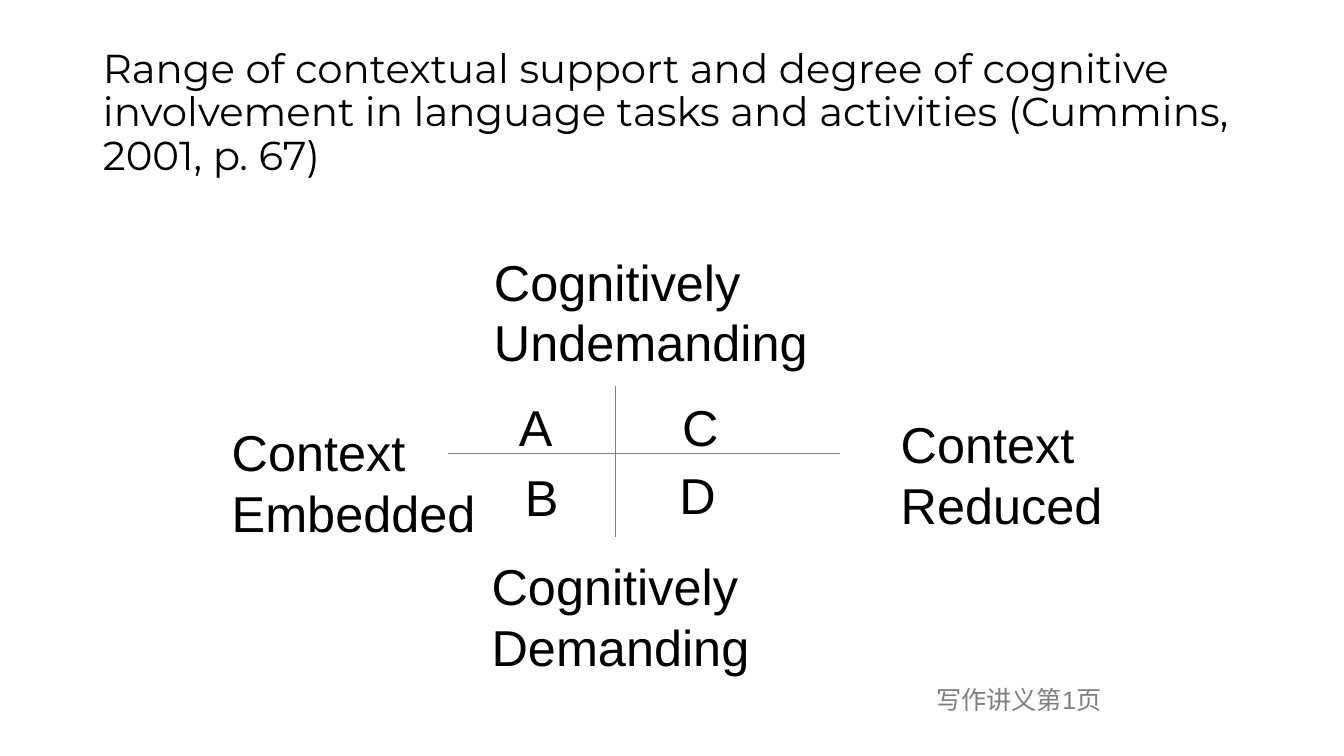
from dataclasses import dataclass

from lxml import etree
from pptx import Presentation
from pptx.dml.color import RGBColor
from pptx.enum.shapes import MSO_CONNECTOR
from pptx.enum.text import MSO_ANCHOR, PP_ALIGN
from pptx.oxml.ns import qn
from pptx.util import Cm, Pt

LEFT = PP_ALIGN.LEFT
TOP = MSO_ANCHOR.TOP
MIDDLE = MSO_ANCHOR.MIDDLE
STRAIGHT = MSO_CONNECTOR.STRAIGHT


@dataclass(frozen=True)
class Theme:
    ink: RGBColor = RGBColor(0, 0, 0)
    gray: RGBColor = RGBColor(0x7F, 0x7F, 0x7F)
    head: str = "Montserrat"
    body: str = "Arial"
    title: float = 28.8
    label: float = 36
    foot: float = 18
    rule: float = 0.75


THEME = Theme()
TITLE = ("Range of contextual support and degree of cognitive involvement "
         "in language tasks and activities (Cummins, 2001, p. 67)")
TITLE_BOX = (2.34, 1.02, 29.2, 3.68)
LABELS = [
    (("Cognitively", "Undemanding"), (12.2, 6.2, 8.8)),
    (("Context", "Embedded"), (5.59, 10.49, 6.8)),
    (("Context", "Reduced"), (22.45, 10.29, 5.8)),
    (("Cognitively", "Demanding"), (12.14, 13.87, 7.1)),
    (("A",), (12.83, 9.86, 1.6)),
    (("C",), (16.94, 9.86, 1.9)),
    (("B",), (12.98, 11.63, 1.9)),
    (("D",), (16.87, 11.56, 1.5)),
]
AXES = [(11.28, 11.43, 21.16, 11.43), (15.52, 9.73, 15.52, 13.54)]
FOOT = ("写作讲义第1页",)
FOOT_BOX = (23.34, 17.12, 4.72)
LINE_CM = 1.53
PAD_CM = 0.27


def add_run(para, text, font, size, color):
    run = para.add_run()
    run.text = text
    run.font.name = font
    run.font.size = Pt(size)
    run.font.color.rgb = color


def add_title(slide):
    shape = slide.shapes.title
    shape.left, shape.top, shape.width, shape.height = map(Cm, TITLE_BOX)
    frame = shape.text_frame
    frame.word_wrap = True
    frame.vertical_anchor = MIDDLE
    para = frame.paragraphs[0]
    para.alignment = LEFT
    para.line_spacing = 0.9
    add_run(para, TITLE, THEME.head, THEME.title, THEME.ink)


def add_label(slide, lines, box, size, color):
    left, top, width = box
    height = len(lines) * LINE_CM * size / THEME.label + PAD_CM
    shape = slide.shapes.add_textbox(Cm(left), Cm(top), Cm(width), Cm(height))
    frame = shape.text_frame
    frame.word_wrap = True
    frame.vertical_anchor = TOP
    for index, line in enumerate(lines):
        para = frame.add_paragraph() if index else frame.paragraphs[0]
        para.alignment = LEFT
        add_run(para, line, THEME.body, size, color)


def add_axis(slide, ends):
    axis = slide.shapes.add_connector(STRAIGHT, *map(Cm, ends))
    axis.line.color.rgb = THEME.gray
    axis.line.width = Pt(THEME.rule)
    etree.SubElement(axis._element.spPr, qn("a:effectLst"))


def main():
    """Build the slide on language tasks and save it."""
    deck = Presentation()
    deck.slide_width, deck.slide_height = Cm(33.87), Cm(19.05)
    slide = deck.slides.add_slide(deck.slide_layouts[5])
    add_title(slide)
    for ends in AXES:
        add_axis(slide, ends)
    for lines, box in LABELS:
        add_label(slide, lines, box, THEME.label, THEME.ink)
    add_label(slide, FOOT, FOOT_BOX, THEME.foot, THEME.gray)
    deck.save("out.pptx")


if __name__ == "__main__":
    main()
